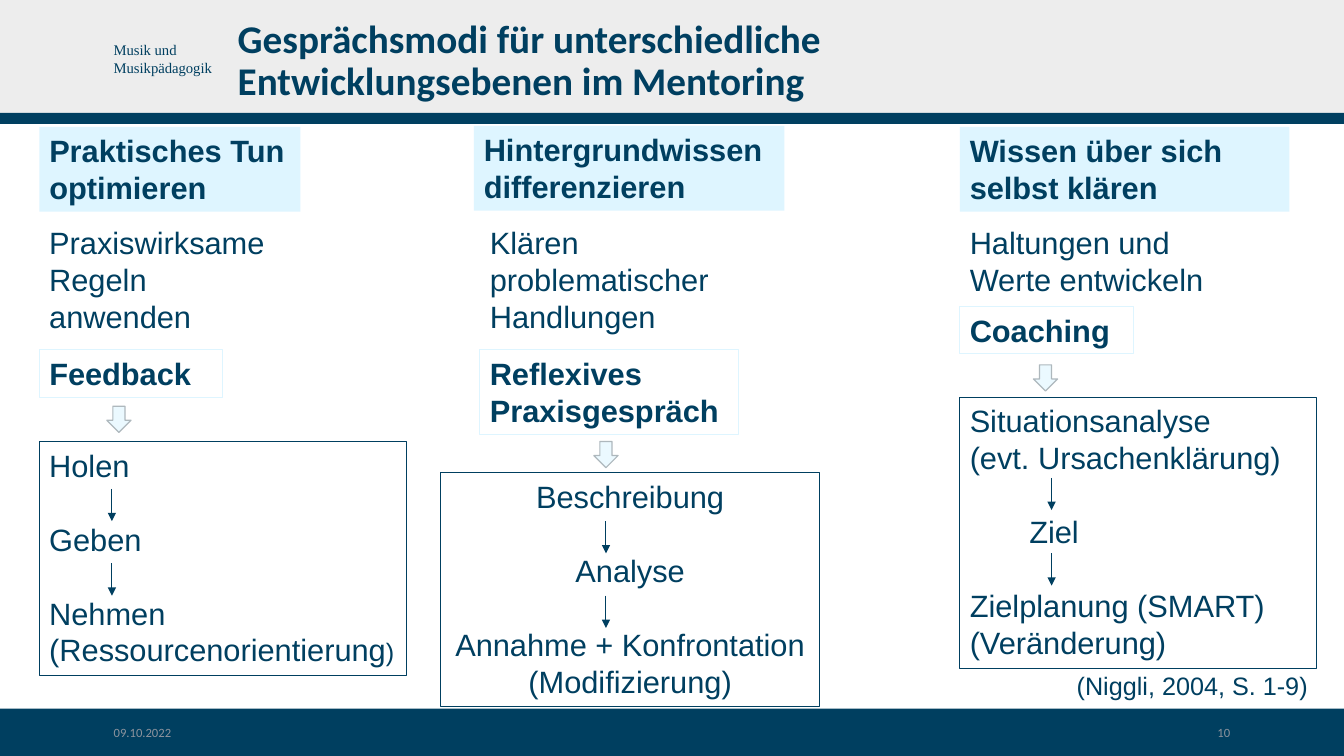
from dataclasses import dataclass

import pptx
import pptx.dml.color
import pptx.enum.shapes
import pptx.enum.text
import pptx.oxml
import pptx.oxml.ns
import pptx.util
from pptx.util import Inches

ALIGN = pptx.enum.text.PP_ALIGN
ANCHOR = pptx.enum.text.MSO_ANCHOR
SHAPES = pptx.enum.shapes.MSO_SHAPE


@dataclass(frozen=True)
class Theme:
    navy: str = "003F60"
    header: str = "EDEDED"
    pale: str = "DEF5FF"
    arrow: str = "EBF9FF"
    arrow_edge: str = "AEB8BD"
    muted: str = "8C939D"
    body_font: str = "Arial"
    title_font: str = "Calibri"
    brand_font: str = "Times New Roman"
    title: float = 28
    body: float = 22
    source: float = 18
    brand: float = 10.5
    footer: float = 9
    step_gap: float = 26.4  # one empty line between steps
    flow_length: float = 0.32


THEME = Theme()


def color(value):
    return pptx.dml.color.RGBColor.from_string(value)


def format_run(run, size, font, tint, bold):
    run.font.size = pptx.util.Pt(size)
    run.font.name = font
    run.font.color.rgb = color(tint)
    run.font.bold = bold


def add_box(slide, at, kind=SHAPES.RECTANGLE, fill=None, line=None, width=0.75):
    shape = slide.shapes.add_shape(kind, *map(Inches, at))
    shape.shadow.inherit = False
    if fill:
        shape.fill.solid()
        shape.fill.fore_color.rgb = color(fill)
    else:
        shape.fill.background()
    if line:
        shape.line.color.rgb = color(line)
        shape.line.width = pptx.util.Pt(width)
    else:
        shape.line.fill.background()
    return shape


def write(shape, text, size=THEME.body, font=THEME.body_font, tint=THEME.navy,
          bold=False, align=ALIGN.LEFT, anchor=ANCHOR.TOP):
    frame = shape.text_frame
    frame.word_wrap = True
    frame.vertical_anchor = anchor
    frame.text = text
    for paragraph in frame.paragraphs:
        paragraph.alignment = align
        for run in paragraph.runs:
            format_run(run, size, font, tint, bold)
    return frame


def add_text(slide, at, text, **style):
    return write(slide.shapes.add_textbox(*map(Inches, at)), text, **style)


def add_flow_arrow(slide, x, y):
    connector = slide.shapes.add_connector(
        pptx.enum.shapes.MSO_CONNECTOR.STRAIGHT,
        Inches(x), Inches(y), Inches(x), Inches(y + THEME.flow_length))
    connector.line.color.rgb = color(THEME.navy)
    connector.line.width = pptx.util.Pt(0.75)
    tail = pptx.oxml.parse_xml(
        f'<a:tailEnd {pptx.oxml.ns.nsdecls("a")} type="triangle"/>')
    connector.line._get_or_add_ln().append(tail)
    connector._element.spPr.append(
        pptx.oxml.parse_xml(f'<a:effectLst {pptx.oxml.ns.nsdecls("a")}/>'))


def add_steps(slide, at, steps, align):
    """Framed steps; each new step stands one line below the previous one."""
    shape = add_box(slide, at, line=THEME.navy)
    frame = write(shape, "\n".join(steps), align=align)
    for paragraph in frame.paragraphs[1:]:
        paragraph.space_before = pptx.util.Pt(THEME.step_gap)
    return frame


def add_column(slide, column):
    heading = add_box(slide, column["heading_at"], fill=THEME.pale)
    write(heading, column["heading"], bold=True)
    add_text(slide, column["aim_at"], column["aim"])
    mode = add_box(slide, column["mode_at"], line=THEME.pale)
    write(mode, column["mode"], bold=True)
    add_box(slide, (*column["arrow"], 0.24, 0.26), SHAPES.DOWN_ARROW,
            THEME.arrow, THEME.arrow_edge, 0.85)
    frame = add_steps(slide, column["steps_at"], column["steps"],
                      column.get("align", ALIGN.LEFT))
    for y in column["flow_y"]:
        add_flow_arrow(slide, column["flow_x"], y)
    return frame


COLUMNS = {
    "feedback": dict(
        heading="Praktisches Tun optimieren", heading_at=(0.39, 1.26, 2.59, 0.84),
        aim="Praxiswirksame Regeln anwenden", aim_at=(0.39, 2.17, 2.34, 1.21),
        mode="Feedback", mode_at=(0.39, 3.47, 1.82, 0.47), arrow=(1.06, 4.03),
        steps=("Holen", "Geben", "Nehmen\v(Ressourcenorientierung"),
        steps_at=(0.39, 4.38, 3.64, 2.32), flow_x=1.11, flow_y=(4.85, 5.59)),
    "reflection": dict(
        heading="Hintergrundwissen differenzieren", heading_at=(4.7, 1.25, 3.08, 0.84),
        aim="Klären problematischer Handlungen", aim_at=(4.76, 2.17, 2.49, 1.21),
        mode="Reflexives Praxisgespräch", mode_at=(4.76, 3.47, 2.57, 0.84),
        arrow=(5.89, 4.38), align=ALIGN.CENTER,
        steps=("Beschreibung", "Analyse", "Annahme + Konfrontation\v(Modifizierung)"),
        steps_at=(4.37, 4.69, 3.76, 2.32), flow_x=6.01, flow_y=(5.17, 5.91)),
    "coaching": dict(
        heading="Wissen über sich selbst klären", heading_at=(9.52, 1.26, 3.27, 0.84),
        aim="Haltungen und Werte entwickeln", aim_at=(9.52, 2.17, 2.64, 0.84),
        mode="Coaching", mode_at=(9.52, 3.04, 1.72, 0.47), arrow=(10.25, 3.62),
        steps=("Situationsanalyse\v(evt. Ursachenklärung)", "Ziel",
               "Zielplanung (SMART)\v(Veränderung)"),
        steps_at=(9.52, 3.94, 3.54, 2.69), flow_x=10.43, flow_y=(4.74, 5.49)),
}


def add_frame(slide):
    # Header and footer bands
    for top, height, fill in ((7.03, 0.47, THEME.navy), (0, 1.13, THEME.header),
                              (1.12, 0.11, THEME.navy)):
        add_box(slide, (0, top, 13.33, height), fill=fill)
    # Header texts
    add_text(slide, (1.03, 0.36, 2.03, 0.45), "Musik und\nMusikpädagogik",
             size=THEME.brand, font=THEME.brand_font)
    title = add_text(
        slide, (2.26, 0.18, 10.8, 0.87),
        "Gesprächsmodi für unterschiedliche\vEntwicklungsebenen im Mentoring",
        size=THEME.title, font=THEME.title_font, bold=True, anchor=ANCHOR.MIDDLE)
    title.paragraphs[0].line_spacing = 0.9
    # Footer texts
    for left, text, align in ((1.03, "09.10.2022", ALIGN.LEFT),
                              (9.3, "10", ALIGN.RIGHT)):
        add_text(slide, (left, 7.15, 3, 0.24), text, size=THEME.footer,
                 font=THEME.title_font, tint=THEME.muted, align=align,
                 anchor=ANCHOR.MIDDLE)


def main():
    presentation = pptx.Presentation()
    presentation.slide_width = Inches(13.33)
    presentation.slide_height = Inches(7.5)
    slide = presentation.slides.add_slide(presentation.slide_layouts[6])
    add_frame(slide)

    # Three levels of mentoring talk
    frames = {name: add_column(slide, column) for name, column in COLUMNS.items()}

    # Smaller closing bracket and indented goal
    bracket = frames["feedback"].paragraphs[-1].add_run()
    bracket.text = ")"
    format_run(bracket, THEME.source, THEME.body_font, THEME.navy, False)
    goal = frames["coaching"].paragraphs[1]
    goal._p.get_or_add_pPr().set("marL", str(Inches(0.59)))

    # Source
    add_text(slide, (10.58, 6.6, 2.75, 0.4), "(Niggli, 2004, S. 1-9)",
             size=THEME.source)
    presentation.save("out.pptx")


if __name__ == "__main__":
    main()
